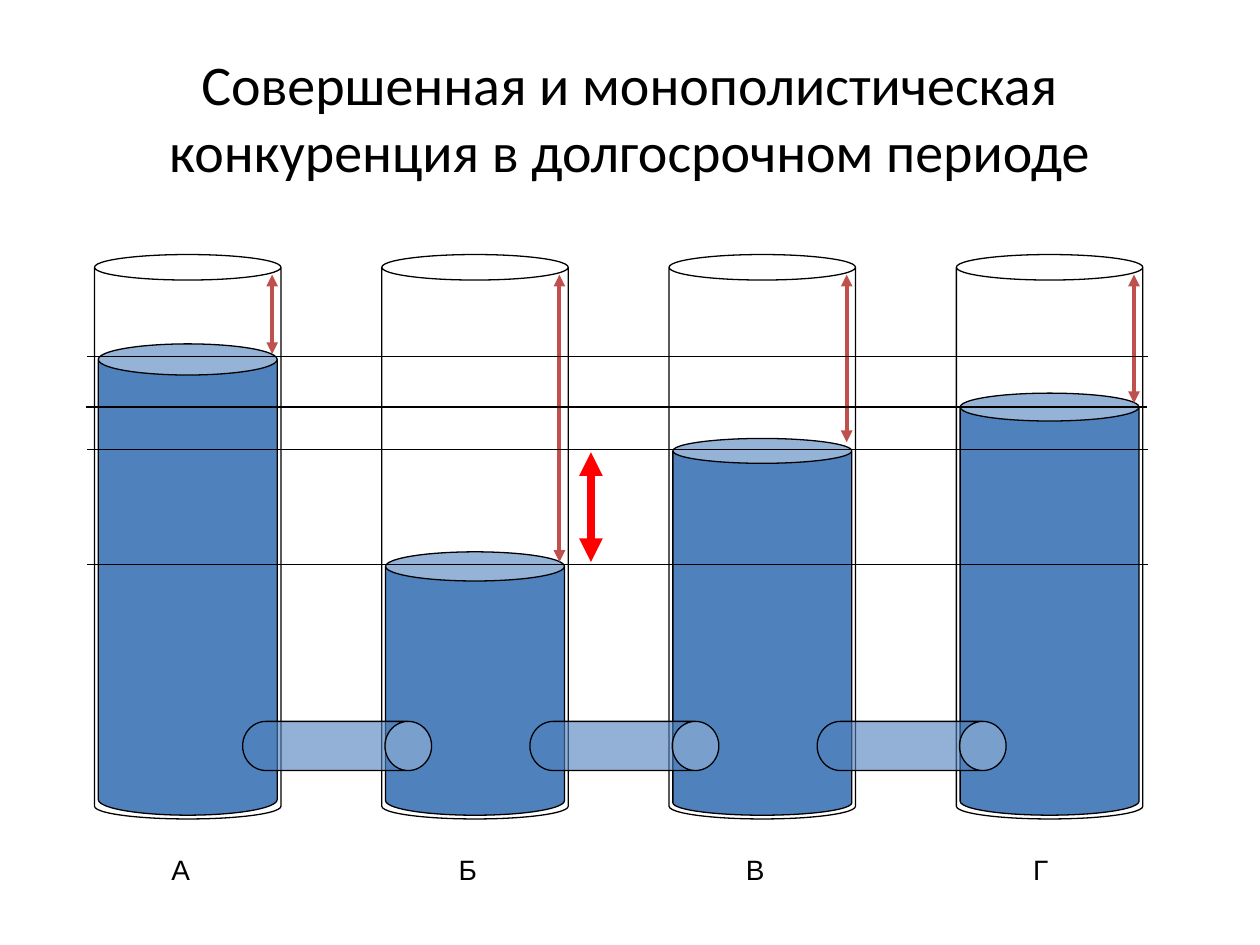
from lxml import etree
from pptx import Presentation
from pptx.dml.color import RGBColor
from pptx.enum import shapes, text
from pptx.oxml import ns
from pptx.util import Inches, Pt

HEADING = "Совершенная и монополистическая конкуренция в долгосрочном периоде"
COLORS = {"ink": "000000", "water": "4F81BD", "gap": "C0504D", "difference": "FF0000"}
# label, water top, water lid adjustment, gap arrow end
VESSELS = [
    ("А", 2.73, 0.174, 2.81),
    ("Б", 4.38, 0.163, 4.46),
    ("В", 3.48, 0.139, 3.51),
    ("Г", 3.12, 0.156, 3.2),
]
LEVELS = [(0.69, 2.83), (0.68, 3.23), (0.69, 4.48), (0.69, 3.57)]
LEVEL_LENGTH = 8.42
LEFT, STEP = 0.75, 2.28
VESSEL_TOP, VESSEL_WIDTH, VESSEL_HEIGHT = 2.02, 1.48, 4.48
INSET, WATER_BOTTOM = 0.03, 6.47
GAP_OFFSET, GAP_TOP = 1.41, 2.18
PIPE_OFFSET, PIPE_TOP, PIPE_WIDTH, PIPE_LENGTH = 1.73, 5.17, 0.39, 1.5


def rgb(name):
    return RGBColor.from_string(COLORS[name])


def add_can(slide, box, lid, fill=None):
    can = slide.shapes.add_shape(shapes.MSO_SHAPE.CAN, *map(Inches, box))
    can.adjustments[0] = lid
    can.shadow.inherit = False
    can.line.color.rgb = rgb("ink")
    can.line.width = Pt(0.75)
    if fill:
        can.fill.solid()
        can.fill.fore_color.rgb = rgb(fill)
    else:
        can.fill.background()
    return can


def add_line(slide, start, end, color="ink", width=0.75, arrows=False):
    line = slide.shapes.add_connector(
        shapes.MSO_CONNECTOR.STRAIGHT, *map(Inches, (*start, *end)))
    line.line.color.rgb = rgb(color)
    line.line.width = Pt(width)
    if arrows:
        outline = line.line._get_or_add_ln()
        for tag in ("a:headEnd", "a:tailEnd"):
            etree.SubElement(outline, ns.qn(tag), type="triangle")
    etree.SubElement(line._element.spPr, ns.qn("a:effectLst"))


def add_run(paragraph, words, font, size):
    run = paragraph.add_run()
    run.text = words
    run.font.name = font
    run.font.size = Pt(size)
    run.font.color.rgb = rgb("ink")


def add_label(slide, left, letter):
    label = slide.shapes.add_textbox(*map(Inches, (left, 6.74, 0.43, 0.27)))
    frame = label.text_frame
    frame.word_wrap = True
    frame.margin_left = frame.margin_right = Inches(0.06)
    frame.margin_top = frame.margin_bottom = Inches(0.03)
    add_run(frame.paragraphs[0], letter, "Arial", 16)


def add_pipe(slide, left):
    pipe = add_can(slide, (left, PIPE_TOP, PIPE_WIDTH, PIPE_LENGTH), 0.949, "water")
    pipe.rotation = 90
    fill = pipe._element.spPr.find(ns.qn("a:solidFill"))
    etree.SubElement(fill[0], ns.qn("a:alpha"), val="61000")


def main():
    """Build the slide of four connected vessels and save it."""
    deck = Presentation()
    deck.slide_width, deck.slide_height = Inches(10), Inches(7.5)
    slide = deck.slides.add_slide(deck.slide_layouts[5])

    heading = slide.shapes.title
    heading.left, heading.top, heading.width, heading.height = map(
        Inches, (0.5, 0.3, 9, 1.25))
    heading.text_frame.vertical_anchor = text.MSO_ANCHOR.MIDDLE
    heading_line = heading.text_frame.paragraphs[0]
    heading_line.alignment = text.PP_ALIGN.CENTER
    add_run(heading_line, HEADING, "Calibri", 32)

    lefts = [LEFT + STEP * i for i in range(len(VESSELS))]
    for left, (_, water_top, lid, _) in zip(lefts, VESSELS):
        add_can(slide, (left, VESSEL_TOP, VESSEL_WIDTH, VESSEL_HEIGHT), 0.137)
        add_can(slide, (left + INSET, water_top, VESSEL_WIDTH - 2 * INSET,
                        WATER_BOTTOM - water_top), lid, "water")
    for left, (_, _, _, gap_end) in zip(lefts, VESSELS):
        gap_x = left + GAP_OFFSET
        add_line(slide, (gap_x, GAP_TOP), (gap_x, gap_end), "gap", 2.25, True)
    for level_left, level in LEVELS:
        add_line(slide, (level_left, level), (level_left + LEVEL_LENGTH, level))
    for left, (letter, *_) in zip(lefts, VESSELS):
        add_label(slide, left + 0.55, letter)
    add_line(slide, (4.69, 3.59), (4.69, 4.46), "difference", 4.5, True)
    for left in lefts[:-1]:
        add_pipe(slide, left + PIPE_OFFSET)

    deck.save("out.pptx")


if __name__ == "__main__":
    main()
